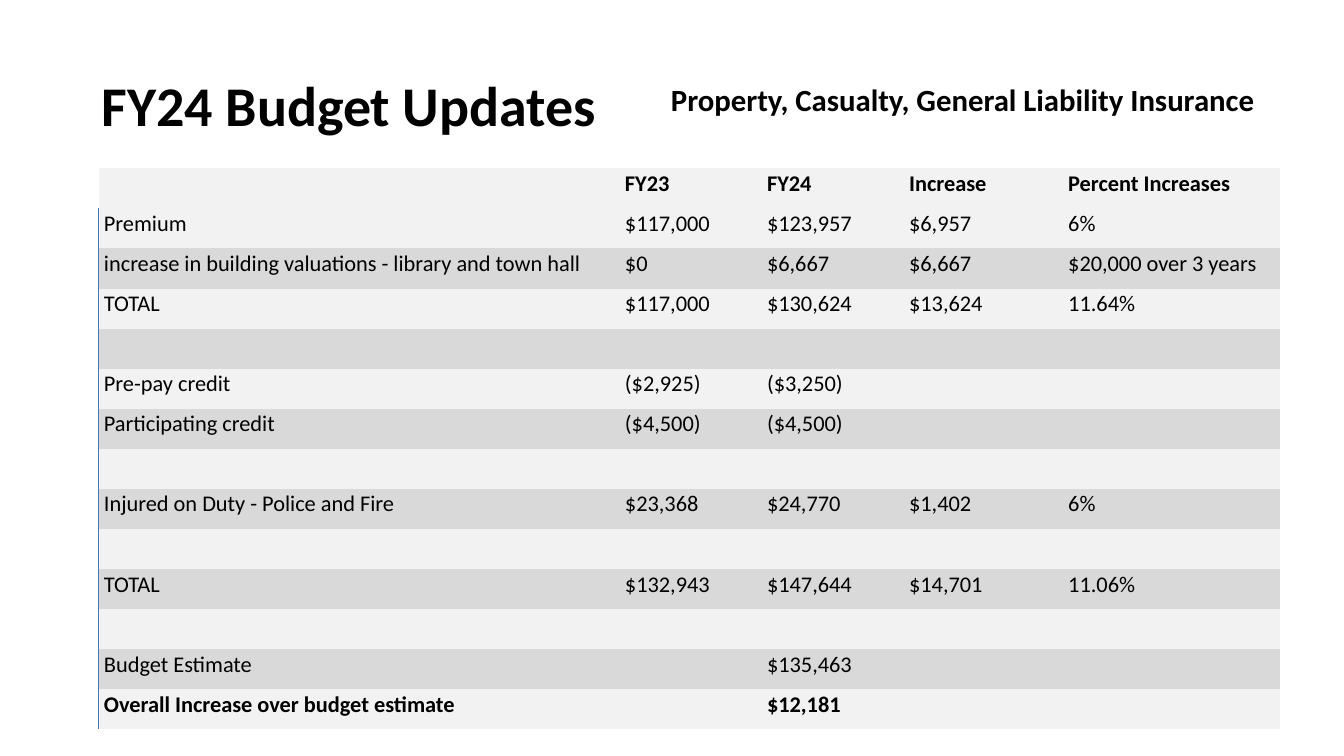
from dataclasses import dataclass

from lxml.etree import SubElement
from pptx import Presentation
from pptx.dml.color import RGBColor
from pptx.enum.text import MSO_ANCHOR, MSO_AUTO_SIZE, PP_ALIGN
from pptx.oxml.ns import qn
from pptx.shapes.autoshape import Shape
from pptx.slide import Slide
from pptx.table import _Cell
from pptx.text.text import _Paragraph
from pptx.util import Cm, Pt

COLOURS = {"text": "000000", "light": "F2F2F2", "dark": "D9D9D9", "edge": "4472C4"}
FONT = "Calibri"
PLAIN_TABLE_STYLE = "{2D5ABB26-0587-4C30-8999-92F81FD0307C}"
COLUMN_WIDTHS = (13.13, 3.58, 3.58, 4.01, 5.46)
ROW_HEIGHT = 1.01


@dataclass
class Heading:
    text: str
    left: float
    top: float
    width: float
    height: float
    size: int
    space_after: int = 0


@dataclass
class BudgetRow:
    label: str = ""
    fy23: str = ""
    fy24: str = ""
    increase: str = ""
    percent: str = ""
    bold: bool = False

    def texts(self) -> tuple[str, ...]:
        return self.label, self.fy23, self.fy24, self.increase, self.percent


TITLE = Heading("FY24 Budget Updates", 2.31, 0.41, 14.35, 4.65, 40)
SUBTITLE = Heading("Property, Casualty, General Liability Insurance", 16.66, 0.23, 15.62, 4.65, 22, 6)

BUDGET_ROWS = (
    BudgetRow("", "FY23", "FY24", "Increase", "Percent Increases", bold=True),
    BudgetRow("Premium", "$117,000", "$123,957", "$6,957", "6%"),
    BudgetRow("increase in building valuations - library and town hall",
              "$0", "$6,667", "$6,667", "$20,000 over 3 years"),
    BudgetRow("TOTAL", "$117,000", "$130,624", "$13,624", "11.64%"),
    BudgetRow(),
    BudgetRow("Pre-pay credit", "($2,925)", "($3,250)"),
    BudgetRow("Participating credit", "($4,500)", "($4,500)"),
    BudgetRow(),
    BudgetRow("Injured on Duty - Police and Fire", "$23,368", "$24,770", "$1,402", "6%"),
    BudgetRow(),
    BudgetRow("TOTAL", "$132,943", "$147,644", "$14,701", "11.06%"),
    BudgetRow(),
    BudgetRow("Budget Estimate", fy24="$135,463"),
    BudgetRow("Overall Increase over budget estimate", fy24="$12,181", bold=True),
)


def format_runs(paragraph: _Paragraph, size: int, bold: bool) -> None:
    for run in paragraph.runs:
        run.font.name = FONT
        run.font.size = Pt(size)
        run.font.bold = bold
        run.font.color.rgb = RGBColor.from_string(COLOURS["text"])


def draw_heading(shape: Shape, heading: Heading) -> None:
    shape.left, shape.top = Cm(heading.left), Cm(heading.top)
    shape.width, shape.height = Cm(heading.width), Cm(heading.height)
    text_frame = shape.text_frame
    text_frame.text = heading.text
    text_frame.word_wrap = True
    text_frame.auto_size = MSO_AUTO_SIZE.NONE
    text_frame.vertical_anchor = MSO_ANCHOR.MIDDLE
    paragraph = text_frame.paragraphs[0]
    paragraph.alignment = PP_ALIGN.LEFT
    paragraph.line_spacing = 0.9
    paragraph.space_after = Pt(heading.space_after)
    format_runs(paragraph, heading.size, True)


def draw_left_border(cell: _Cell) -> None:
    properties = cell._tc.get_or_add_tcPr()
    border = SubElement(properties, qn("a:lnL"), w=str(Pt(1)))
    fill = SubElement(border, qn("a:solidFill"))
    SubElement(fill, qn("a:srgbClr"), val=COLOURS["edge"])
    properties.insert(0, border)


def draw_cell(cell: _Cell, text: str, bold: bool, colour: str) -> None:
    cell.fill.solid()
    cell.fill.fore_color.rgb = RGBColor.from_string(colour)
    cell.vertical_anchor = MSO_ANCHOR.BOTTOM
    cell.margin_left = Cm(0.13)
    cell.margin_top = cell.margin_right = Cm(0.03)
    cell.margin_bottom = Cm(0.28 if text else 0)
    if text:
        cell.text_frame.text = text
        format_runs(cell.text_frame.paragraphs[0], 16, bold)


def draw_budget_table(slide: Slide) -> None:
    table = slide.shapes.add_table(
        len(BUDGET_ROWS), len(COLUMN_WIDTHS), Cm(2.49), Cm(4.24),
        Cm(sum(COLUMN_WIDTHS)), Cm(ROW_HEIGHT * len(BUDGET_ROWS)),
    ).table
    table.first_row = table.horz_banding = False
    table._tbl.tblPr.find(qn("a:tableStyleId")).text = PLAIN_TABLE_STYLE
    for column, width in zip(table.columns, COLUMN_WIDTHS):
        column.width = Cm(width)
    for index, budget_row in enumerate(BUDGET_ROWS):
        table.rows[index].height = Cm(ROW_HEIGHT)
        is_dark = index > 0 and index % 2 == 0
        colour = COLOURS["dark" if is_dark else "light"]
        for cell, text in zip(table.rows[index].cells, budget_row.texts()):
            draw_cell(cell, text, budget_row.bold, colour)
        if index > 0:
            draw_left_border(table.cell(index, 0))


def main() -> None:
    presentation = Presentation()
    presentation.slide_width, presentation.slide_height = Cm(33.87), Cm(19.05)
    slide = presentation.slides.add_slide(presentation.slide_layouts[5])
    draw_heading(slide.shapes.title, TITLE)
    draw_heading(slide.shapes.add_textbox(0, 0, 0, 0), SUBTITLE)
    draw_budget_table(slide)
    presentation.save("out.pptx")


if __name__ == "__main__":
    main()
